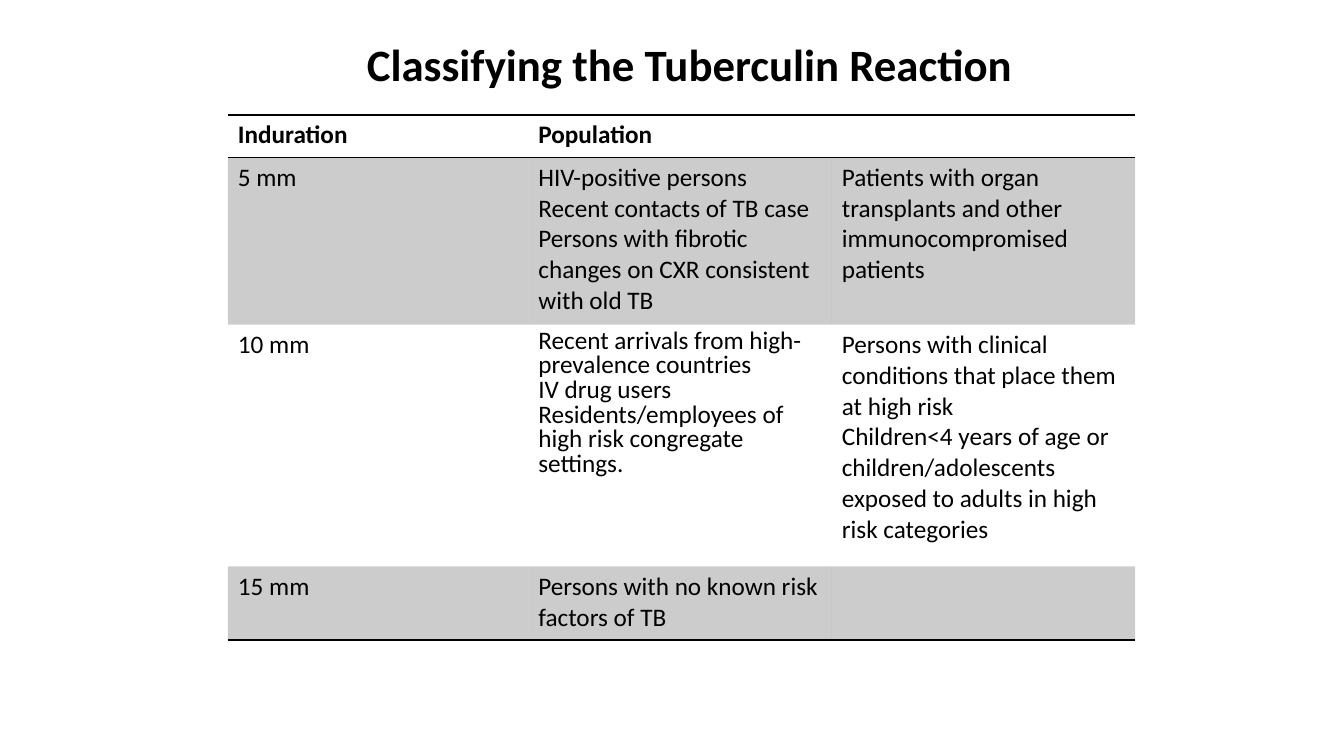
from lxml.etree import SubElement
from pptx import Presentation
from pptx.dml.color import RGBColor
from pptx.oxml import parse_xml
from pptx.oxml.ns import nsdecls, qn
from pptx.util import Inches, Pt

TITLE = "Classifying the Tuberculin Reaction"
ROWS = [
    ("Induration", "Population", ""),
    ("5 mm",
     "HIV-positive persons\nRecent contacts of TB case\n"
     "Persons with fibrotic changes on CXR consistent with old TB",
     "Patients with organ transplants and other immunocompromised patients"),
    ("10 mm",
     "Recent arrivals from high-prevalence countries\nIV drug users\n"
     "Residents/employees of high risk congregate settings.",
     "Persons with clinical conditions that place them at high risk\n"
     "Children<4 years of age or children/adolescents exposed to adults in high risk categories"),
    ("15 mm", "Persons with no known risk factors of TB", ""),
]
COL_WIDTHS = [2.98, 3.01, 3.01]
ROW_HEIGHTS = [0.42, 1.66, 2.4, 0.73]
BORDERS = {0: ("lnT", "lnB"), 3: ("lnB",)}
SHADED_ROWS = (1, 3)
TIGHT_CELL = (2, 1)
COLORS = {"ink": "000000"}
BAND_ALPHA = 20
FONT = "Calibri"
NO_STYLE = "{2D5ABB26-0587-4C30-8999-92F81FD0307C}"


def style(p, size, bold):
    p.font.name = FONT
    p.font.size = Pt(size)
    p.font.bold = bold
    p.font.color.rgb = RGBColor.from_string(COLORS["ink"])


def shade(cell):
    cell.fill.solid()
    cell.fill.fore_color.rgb = RGBColor.from_string(COLORS["ink"])
    color = cell._tc.tcPr.find(".//" + qn("a:srgbClr"))
    SubElement(color, qn("a:alpha"), val=str(BAND_ALPHA * 1000))


def rule(cell, sides):
    for i, side in enumerate(sides):
        cell._tc.get_or_add_tcPr().insert(i, parse_xml(
            f'<a:{side} {nsdecls("a")} w="{Pt(1)}"><a:solidFill>'
            f'<a:srgbClr val="{COLORS["ink"]}"/></a:solidFill></a:{side}>'))


def add_reaction_table(s):
    frame = s.shapes.add_table(len(ROWS), len(COL_WIDTHS), Inches(2.26), Inches(1.14),
                               Inches(sum(COL_WIDTHS)), Inches(sum(ROW_HEIGHTS)))
    table = frame.table
    table.horz_banding = False
    table._tbl.tblPr.find(qn("a:tableStyleId")).text = NO_STYLE
    for col, width in zip(table.columns, COL_WIDTHS):
        col.width = Inches(width)
    for r, (row, height) in enumerate(zip(table.rows, ROW_HEIGHTS)):
        row.height = Inches(height)
        for c, cell in enumerate(row.cells):
            cell.text = ROWS[r][c]
            for p in cell.text_frame.paragraphs:
                style(p, 18, r == 0)
                if (r, c) == TIGHT_CELL:
                    p.line_spacing = 0.8
            if r in SHADED_ROWS:
                shade(cell)
            else:
                cell.fill.background()
            rule(cell, BORDERS.get(r, ()))


def main():
    prs = Presentation()
    prs.slide_width, prs.slide_height = Inches(13.33), Inches(7.5)
    s = prs.slides.add_slide(prs.slide_layouts[6])
    add_reaction_table(s)
    tf = s.shapes.add_textbox(Inches(3.54), Inches(0.32), Inches(6.91), Inches(0.64)).text_frame
    tf.word_wrap = True
    tf.text = TITLE
    style(tf.paragraphs[0], 32, True)
    prs.save("out.pptx")


if __name__ == "__main__":
    main()
